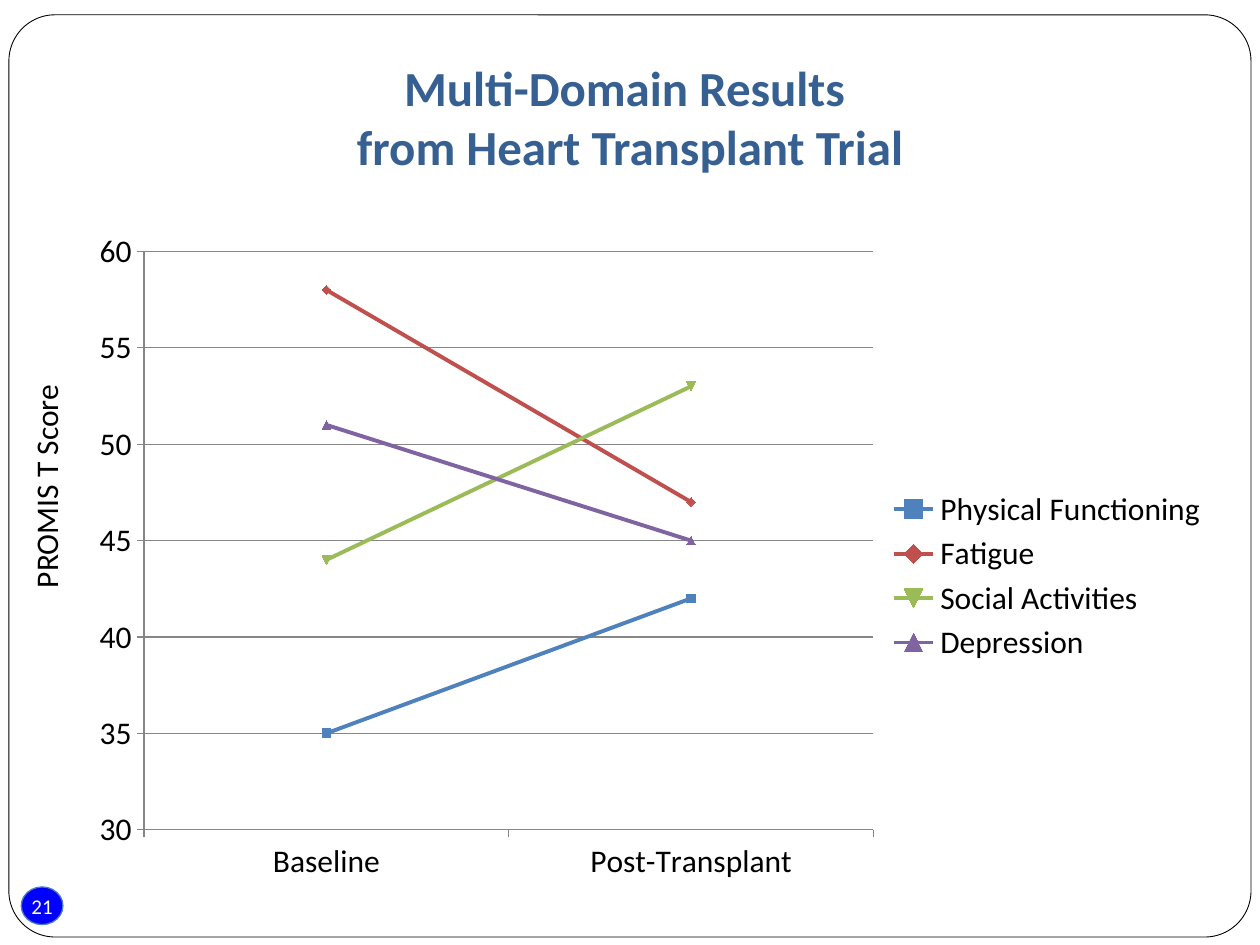
"""Build the slide with multi-domain results from the heart transplant trial."""
from lxml import etree
from pptx import Presentation, util as u
from pptx.chart.data import CategoryChartData
from pptx.dml.color import RGBColor
from pptx.enum import chart as charts, shapes, text

FONT = "Calibri"
COLORS = {
    "title": "376092", "text": "000000", "badge": "0000FF", "badge line": "4B7EBC",
    "white": "FFFFFF", "axis": "868686",
    "Physical Functioning": "4F81BD", "Fatigue": "C0504D",
    "Social Activities": "9BBB59", "Depression": "8064A2",
}
SCORES = {
    "Physical Functioning": (35, 42), "Fatigue": (58, 47),
    "Social Activities": (44, 53), "Depression": (51, 45),
}


def color(name):
    return RGBColor.from_string(COLORS[name])


def style_font(font, size, name, bold=False):
    font.name, font.size, font.bold = FONT, u.Pt(size), bold
    font.color.rgb = color(name)


presentation = Presentation()
presentation.slide_width, presentation.slide_height = u.Cm(25.4), u.Cm(19.05)
slide = presentation.slides.add_slide(presentation.slide_layouts[5])

badge = slide.shapes.add_shape(
    shapes.MSO_SHAPE.OVAL, u.Cm(0.43), u.Cm(17.88), u.Cm(0.84), u.Cm(0.76))
badge.shadow.inherit = False
badge.fill.solid()
badge.fill.fore_color.rgb = color("badge")
badge.line.color.rgb = color("badge line")
badge.line.width = u.Pt(0.75)
frame = badge.text_frame
frame.margin_left = frame.margin_right = frame.margin_top = frame.margin_bottom = 0
frame.vertical_anchor = text.MSO_ANCHOR.MIDDLE
frame.word_wrap = False
paragraph = frame.paragraphs[0]
paragraph.alignment = text.PP_ALIGN.CENTER
run = paragraph.add_run()
run.text = "21"
style_font(run.font, 12, "white")

border = slide.shapes.add_shape(
    shapes.MSO_SHAPE.ROUNDED_RECTANGLE, u.Cm(0.18), u.Cm(0.3), u.Cm(25.04), u.Cm(18.59))
border.adjustments[0] = 0.05
border.shadow.inherit = False
border.fill.background()
border.line.color.rgb = color("text")
border.line.width = u.Pt(0.5)

title = slide.shapes.title
title.left, title.top, title.width, title.height = u.Cm(1.27), u.Cm(0.76), u.Cm(22.86), u.Cm(3.18)
title.text_frame.vertical_anchor = text.MSO_ANCHOR.MIDDLE
paragraph = title.text_frame.paragraphs[0]
paragraph.alignment = text.PP_ALIGN.CENTER
for index, line in enumerate(("Multi-Domain Results ", "from Heart Transplant Trial")):
    if index:
        paragraph.add_line_break()
    run = paragraph.add_run()
    run.text = line
    style_font(run.font, 28, "title", bold=True)

data = CategoryChartData()
data.categories = ("Baseline", "Post-Transplant")
for name, values in SCORES.items():
    data.add_series(name, values)
chart = slide.shapes.add_chart(
    charts.XL_CHART_TYPE.LINE_MARKERS,
    u.Cm(1.27), u.Cm(4.5), u.Cm(23.34), u.Cm(14.22), data).chart
style_font(chart.font, 18, "text")
chart.has_title = False
chart.has_legend = True
chart.legend.position = charts.XL_LEGEND_POSITION.RIGHT
chart.legend.include_in_layout = False

plot = chart.plots[0]
plot.vary_by_categories = False
for series in plot.series:
    series.smooth = False
    series.format.line.color.rgb = color(series.name)
    series.format.line.width = u.Pt(2.25)
    series.marker.size = 5
    series.marker.format.fill.solid()
    series.marker.format.fill.fore_color.rgb = color(series.name)
    series.marker.format.line.color.rgb = color(series.name)

scores = chart.value_axis
scores.minimum_scale, scores.maximum_scale, scores.major_unit = 30, 60, 5
scores.has_major_gridlines = True
for axis in (chart.category_axis, scores):
    axis.major_tick_mark = charts.XL_TICK_MARK.OUTSIDE
for item in (chart.category_axis, scores, scores.major_gridlines):
    item.format.line.color.rgb = color("axis")
    item.format.line.width = u.Pt(0.75)

plot_area = chart.element.chart.plotArea
namespace = etree.QName(plot_area).namespace
for old_layout in plot_area.findall(f"{{{namespace}}}layout"):
    plot_area.remove(old_layout)
layout = etree.Element(f"{{{namespace}}}layout")
manual = etree.SubElement(layout, f"{{{namespace}}}manualLayout")
for tag, value in (("layoutTarget", "inner"), ("xMode", "edge"), ("yMode", "edge"),
                   ("x", 0.07), ("y", 0.04), ("w", 0.63), ("h", 0.82)):
    etree.SubElement(manual, f"{{{namespace}}}{tag}", val=str(value))
plot_area.insert(0, layout)

axis_label = slide.shapes.add_textbox(u.Cm(-1.4), u.Cm(9.27), u.Cm(4.65), u.Cm(1.02))
axis_label.rotation = 270
axis_label.text_frame.word_wrap = False
axis_label.text_frame.auto_size = text.MSO_AUTO_SIZE.SHAPE_TO_FIT_TEXT
run = axis_label.text_frame.paragraphs[0].add_run()
run.text = "PROMIS T Score"
style_font(run.font, 18, "text")

presentation.save("out.pptx")
